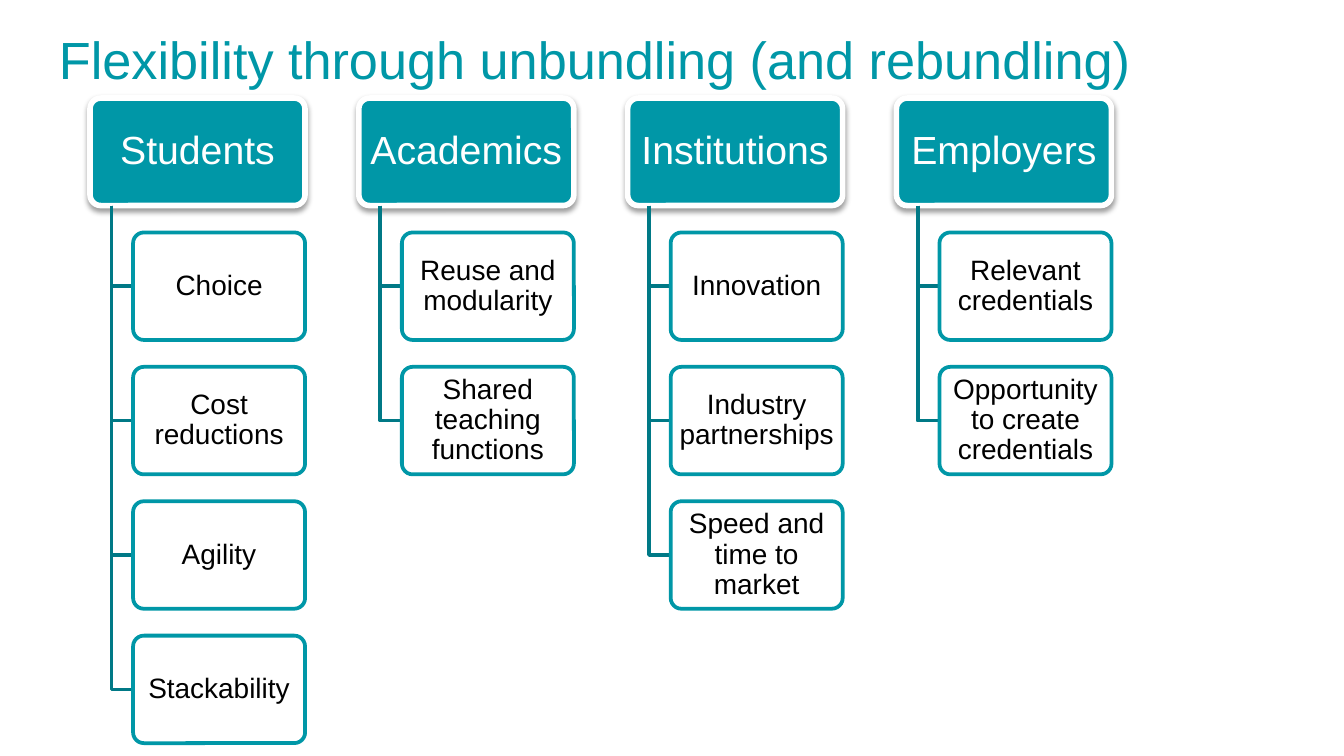
from dataclasses import dataclass

import pptx
import pptx.dml.color
import pptx.enum.shapes
import pptx.enum.text
import pptx.oxml
import pptx.oxml.ns
import pptx.util

Inch = pptx.util.Inches
Pt = pptx.util.Pt

HUE = {"teal": "0097A7", "deep": "007986", "white": "FFFFFF", "black": "000000"}
FONT = "Arial"

# Slide in 16:9
SLIDE_W = 10
SLIDE_H = SLIDE_W * 9 / 16

# Grid: one column per group, one row per box
LEFT, TOP = 0.67, 0.73
COL, ROW = 2.0, 1.0
WIDE, HIGH = 1.6, 0.8
STEM = WIDE * 0.1
INDENT = WIDE * 0.2


@dataclass
class Group:
    head: str
    items: list[str]


@dataclass
class Style:
    fill: str
    line: str
    weight: float
    text: str
    size: int
    pad: tuple[float, float]


HEAD = Style("teal", "white", 3, "white", 21, (0.04, 0.03))
ITEM = Style("white", "teal", 2, "black", 15, (0.03, 0.02))

GROUPS = [
    Group("Students", ["Choice", "Cost reductions", "Agility", "Stackability"]),
    Group("Academics", ["Reuse and modularity", "Shared teaching functions"]),
    Group("Institutions", ["Innovation", "Industry partnerships",
                           "Speed and time to market"]),
    Group("Employers", ["Relevant credentials", "Opportunity to create credentials"]),
]


def color(name: str) -> pptx.dml.color.RGBColor:
    return pptx.dml.color.RGBColor.from_string(HUE[name])


def write(frame, text: str, size: int, hue: str) -> None:
    frame.word_wrap = True
    frame.text = text
    font = frame.paragraphs[0].runs[0].font
    font.name, font.size = FONT, Pt(size)
    font.color.rgb = color(hue)


def box(parts, x: float, y: float, wide: float, text: str, style: Style):
    """Draw one rounded box with centred text."""
    kind = pptx.enum.shapes.MSO_SHAPE.ROUNDED_RECTANGLE
    shape = parts.add_shape(kind, Inch(x), Inch(y), Inch(wide), Inch(HIGH))
    shape.adjustments[0] = 0.1
    shape.shadow.inherit = False
    shape.fill.solid()
    shape.fill.fore_color.rgb = color(style.fill)
    shape.line.color.rgb = color(style.line)
    shape.line.width = Pt(style.weight)
    frame = shape.text_frame
    frame.margin_left = frame.margin_right = Inch(style.pad[0])
    frame.margin_top = frame.margin_bottom = Inch(style.pad[1])
    frame.vertical_anchor = pptx.enum.text.MSO_ANCHOR.MIDDLE
    write(frame, text, style.size, style.text)
    para = frame.paragraphs[0]
    para.alignment = pptx.enum.text.PP_ALIGN.CENTER
    para.line_spacing = 0.9
    return shape


def shade(shape) -> None:
    """Add a soft shadow below the shape."""
    space = pptx.oxml.ns.nsdecls("a")
    shadow = pptx.oxml.parse_xml(
        f'<a:outerShdw {space} blurRad="{Pt(3.1)}" dist="{Pt(1.6)}" dir="5400000" '
        f'rotWithShape="0"><a:srgbClr val="{HUE["black"]}"><a:alpha val="38000"/>'
        "</a:srgbClr></a:outerShdw>")
    shape.element.spPr.find(pptx.oxml.ns.qn("a:effectLst")).append(shadow)


def fade(shape) -> None:
    """Make the fill 90% opaque."""
    alpha = pptx.oxml.parse_xml(
        f'<a:alpha {pptx.oxml.ns.nsdecls("a")} val="90000"/>')
    fill = shape.element.spPr.find(pptx.oxml.ns.qn("a:solidFill"))
    fill[0].append(alpha)


def elbow(parts, x: float, y: float, end: tuple[float, float]) -> None:
    """Draw a line down from x, y and then across to its end."""
    build = parts.build_freeform(Inch(x), Inch(y))
    build.add_line_segments([(Inch(x), Inch(end[1])),
                             (Inch(end[0]), Inch(end[1]))], close=False)
    shape = build.convert_to_shape()
    shape.shadow.inherit = False
    shape.fill.background()
    shape.line.color.rgb = color("deep")
    shape.line.width = Pt(2)


def column(parts, col: int, group: Group) -> None:
    x = LEFT + col * COL
    shade(box(parts, x, TOP, WIDE, group.head, HEAD))
    for row, text in enumerate(group.items, 1):
        y = TOP + row * ROW
        elbow(parts, x + STEM, TOP + HIGH, (x + INDENT, y + HIGH / 2))
        fade(box(parts, x + INDENT, y, WIDE - INDENT, text, ITEM))


def main() -> None:
    deck = pptx.Presentation()
    deck.slide_width, deck.slide_height = Inch(SLIDE_W), Inch(SLIDE_H)
    slide = deck.slides.add_slide(deck.slide_layouts[6])

    # Title
    title = slide.shapes.add_textbox(Inch(0.34), Inch(0.1), Inch(9.32), Inch(0.63))
    title.text_frame.margin_top = Inch(0.1)
    write(title.text_frame, "Flexibility through unbundling (and rebundling)",
          28, "teal")

    # Hierarchy
    parts = slide.shapes.add_group_shape().shapes
    for col, group in enumerate(GROUPS):
        column(parts, col, group)

    deck.save("out.pptx")


if __name__ == "__main__":
    main()
